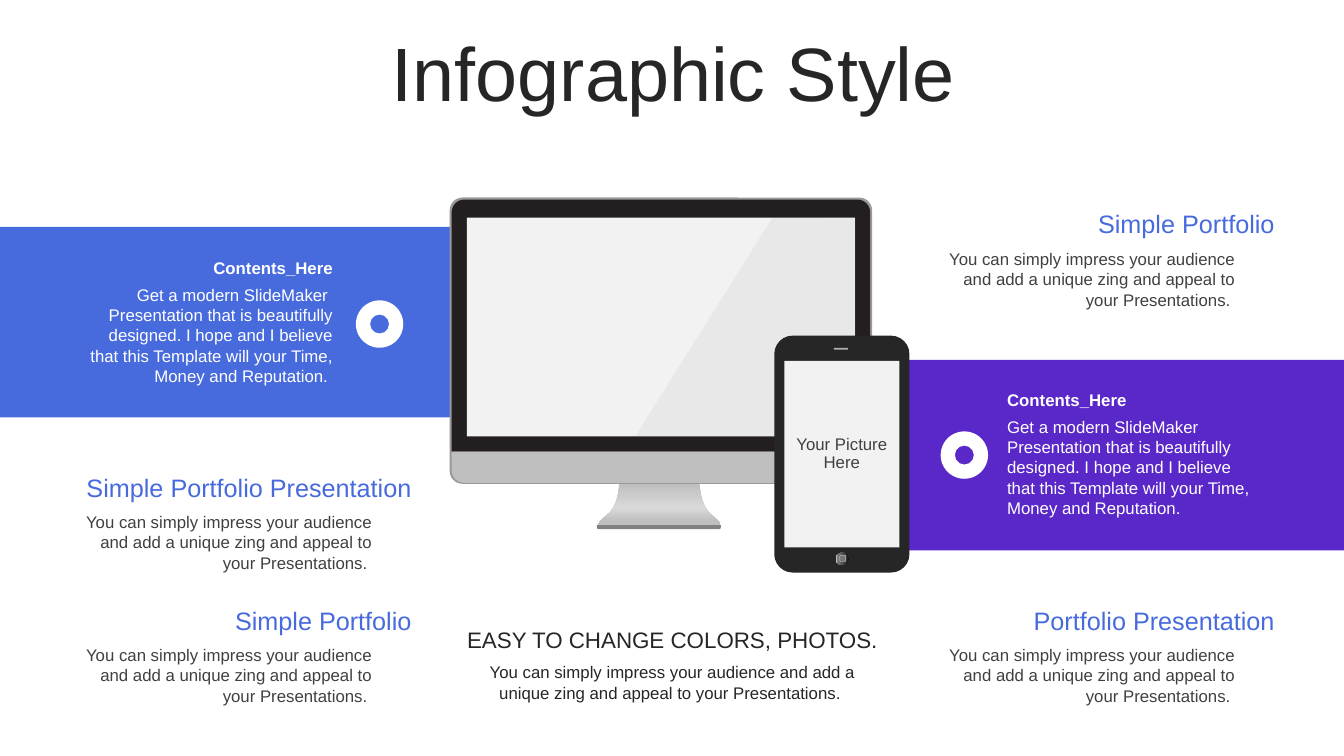
from lxml import etree
from pptx import Presentation
from pptx import util as u
from pptx.dml.color import RGBColor
from pptx.enum import shapes, text
from pptx.oxml.ns import qn

BLUE = RGBColor(0x47, 0x6A, 0xDD)
PURPLE = RGBColor(0x5A, 0x28, 0xC8)
WHITE = RGBColor(0xFF, 0xFF, 0xFF)
INK = RGBColor(0x26, 0x26, 0x26)
BODY = RGBColor(0x40, 0x40, 0x40)
SCREEN = RGBColor(0xF2, 0xF2, 0xF2)
BEZEL = RGBColor(0x23, 0x1F, 0x20)
EDGE = RGBColor(0x99, 0x99, 0x99)
SILVER = RGBColor(0xBF, 0xBF, 0xBF)
LIGHT = RGBColor(0xD9, 0xD9, 0xD9)
FOOT = RGBColor(0x80, 0x80, 0x80)
SPEAKER = RGBColor(0xB0, 0xB0, 0xB0)
KEY = RGBColor(0x73, 0x73, 0x73)
BUTTON_DARK = RGBColor(0x0F, 0x0F, 0x0F)
BUTTON_MID = RGBColor(0x59, 0x59, 0x59)

SHAPE = shapes.MSO_SHAPE
LEFT, CENTER, RIGHT = text.PP_ALIGN.LEFT, text.PP_ALIGN.CENTER, text.PP_ALIGN.RIGHT
TOP, MIDDLE = text.MSO_ANCHOR.TOP, text.MSO_ANCHOR.MIDDLE

IMPRESS = ("You can simply impress your audience and add a unique zing "
           "and appeal to your Presentations. ")
MODERN = ("Get a modern SlideMaker  Presentation that is beautifully designed. "
          "I hope and I believe that this Template will your Time, "
          "Money and Reputation.")


def bezier(start, c1, c2, end, steps=12):
    for i in range(steps + 1):
        t = i / steps
        weights = ((1 - t) ** 3, 3 * t * (1 - t) ** 2, 3 * t * t * (1 - t), t ** 3)
        yield tuple(sum(w * pt[k] for w, pt in zip(weights, (start, c1, c2, end)))
                    for k in (0, 1))


class Deck:
    font = "Arial"

    def __init__(self, prs):
        self.slide = prs.slides.add_slide(prs.slide_layouts[5])

    def set_text(self, tf, words, size, color, align, anchor=TOP, bold=False,
                 spacing=None, before=0):
        tf.word_wrap = True
        tf.vertical_anchor = anchor
        p = tf.paragraphs[0]
        p.text = words
        p.alignment = align
        p.space_before = u.Pt(before)
        if spacing:
            p.line_spacing = spacing
        p.font.name, p.font.size = self.font, u.Pt(size)
        p.font.bold, p.font.color.rgb = bold, color

    def title(self, box, words):
        sp = self.slide.shapes.title
        sp.left, sp.top, sp.width, sp.height = map(u.Inches, box)
        self.set_text(sp.text_frame, words, 54, INK, CENTER, MIDDLE,
                      spacing=0.9, before=10)

    def text(self, box, words, size, color, align, **style):
        sp = self.slide.shapes.add_textbox(*map(u.Inches, box))
        self.set_text(sp.text_frame, words, size, color, align, **style)

    def paint(self, sp, color):
        sp.shadow.inherit = False
        sp.line.fill.background()
        sp.fill.solid()
        sp.fill.fore_color.rgb = color
        return sp

    def shape(self, kind, box, color, *adjustments):
        sp = self.slide.shapes.add_shape(kind, *map(u.Inches, box))
        for i, value in enumerate(adjustments):
            sp.adjustments[i] = value
        return self.paint(sp, color)

    def outline(self, points, color):
        points = [(u.Inches(x), u.Inches(y)) for x, y in points]
        builder = self.slide.shapes.build_freeform(*points[0], scale=1.0)
        builder.add_line_segments(points[1:], close=True)
        return self.paint(builder.convert_to_shape(), color)

    def gradient(self, sp, stops, angle):
        sp.fill.gradient()
        sp.fill.gradient_angle = angle
        gs_list = next(sp._element.spPr.iter(qn("a:gsLst")))
        for gs in list(gs_list):
            gs_list.remove(gs)
        for position, color in stops:
            gs = etree.SubElement(gs_list, qn("a:gs"), pos=str(position * 1000))
            etree.SubElement(gs, qn("a:srgbClr"), val=str(color))

    def fade(self, sp, percent):
        color = next(sp._element.spPr.iter(qn("a:srgbClr")))
        etree.SubElement(color, qn("a:alpha"), val=str(percent * 1000))

    def border(self, sp, color, width):
        sp.line.color.rgb = color
        sp.line.width = u.Pt(width)

    def monitor(self):
        middle = 6.54
        side = [*bezier((6.94, 4.8), (6.94, 4.8), (6.94, 4.99), (7.03, 5.08)),
                *bezier((7.03, 5.08), (7.12, 5.17), (7.25, 5.25), (7.02, 5.25))]
        mirrored = [(2 * middle - x, y) for x, y in reversed(side)]
        stand = self.outline(side + mirrored, SILVER)
        self.gradient(stand, [(0, SILVER), (53, LIGHT), (83, SILVER), (100, SILVER)], 270)
        self.shape(SHAPE.ROUNDED_RECTANGLE, (4.46, 1.96, 4.19, 2.84), EDGE, 0.045)
        self.shape(SHAPE.ROUND_2_SAME_RECTANGLE, (4.48, 1.98, 4.15, 2.5), BEZEL, 0.05, 0)
        self.shape(SHAPE.ROUND_2_SAME_RECTANGLE, (5.92, 5.21, 1.23, 0.04), FOOT, 0, 0.5)
        self.shape(SHAPE.ROUND_2_SAME_RECTANGLE, (4.48, 4.48, 4.15, 0.31), SILVER, 0, 0.4)
        self.shape(SHAPE.RECTANGLE, (4.63, 2.16, 3.85, 2.17), SCREEN)
        glare = self.outline([(7.66, 2.16), (8.49, 2.17), (8.49, 4.33), (6.3, 4.33)], EDGE)
        self.fade(glare, 10)

    def phone(self):
        self.shape(SHAPE.ROUNDED_RECTANGLE, (7.68, 3.33, 1.34, 2.35), INK, 0.136)
        self.shape(SHAPE.RECTANGLE, (8.27, 3.45, 0.14, 0.02), SPEAKER)
        button = self.shape(SHAPE.OVAL, (8.29, 5.48, 0.13, 0.13), FOOT)
        self.gradient(button, [(0, BUTTON_DARK), (56, BUTTON_MID), (91, FOOT),
                               (100, SILVER)], 180)
        key = self.shape(SHAPE.ROUNDED_RECTANGLE, (8.33, 5.51, 0.06, 0.06), KEY)
        self.border(key, SPEAKER, 0.5)
        screen = self.shape(SHAPE.RECTANGLE, (7.78, 3.58, 1.14, 1.85), SCREEN)
        self.set_text(screen.text_frame, "Your Picture Here", 12, BODY, CENTER, MIDDLE,
                      spacing=0.9, before=10)

    def band_text(self, left, top, width, words, align):
        self.text((left, top, width, 0.3), "Contents_Here", 12, WHITE, align,
                  anchor=MIDDLE, bold=True)
        self.text((left, top + 0.26, width, 1.11), words, 12, WHITE, align, anchor=MIDDLE)

    def portfolio(self, left, top, heading):
        self.text((left, top, 4.08, 0.34), heading, 18, BLUE, RIGHT, spacing=0.8)
        self.text((left + 0.49, top + 0.34, 3.2, 0.71), IMPRESS, 12, BODY, RIGHT)


def main():
    prs = Presentation()
    prs.slide_width, prs.slide_height = u.Inches(13.33), u.Inches(7.5)
    deck = Deck(prs)
    deck.title((0.35, 0.37, 12.66, 0.79), "Infographic Style")

    deck.shape(SHAPE.RECTANGLE, (0, 2.25, 4.58, 1.89), BLUE)
    deck.shape(SHAPE.RECTANGLE, (8.5, 3.57, 4.83, 1.89), PURPLE)
    deck.monitor()
    deck.phone()

    deck.band_text(0.73, 2.51, 2.67, MODERN + " ", RIGHT)
    deck.band_text(9.89, 3.82, 2.71, MODERN, LEFT)
    for left, top in ((3.53, 2.98), (9.33, 4.28)):
        deck.shape(SHAPE.DONUT, (left, top, 0.47, 0.47), WHITE, 0.3)

    for left, top, heading in ((0.1, 4.69, "Simple Portfolio Presentation"),
                               (0.1, 6.01, "Simple Portfolio"),
                               (8.66, 2.08, "Simple Portfolio"),
                               (8.66, 6.01, "Portfolio Presentation")):
        deck.portfolio(left, top, heading)

    deck.text((4.52, 6.16, 4.3, 0.37), "EASY TO CHANGE COLORS, PHOTOS.", 16, INK, CENTER)
    deck.text((4.55, 6.52, 4.24, 0.5), IMPRESS, 12, INK, CENTER)
    prs.save("out.pptx")


if __name__ == "__main__":
    main()
